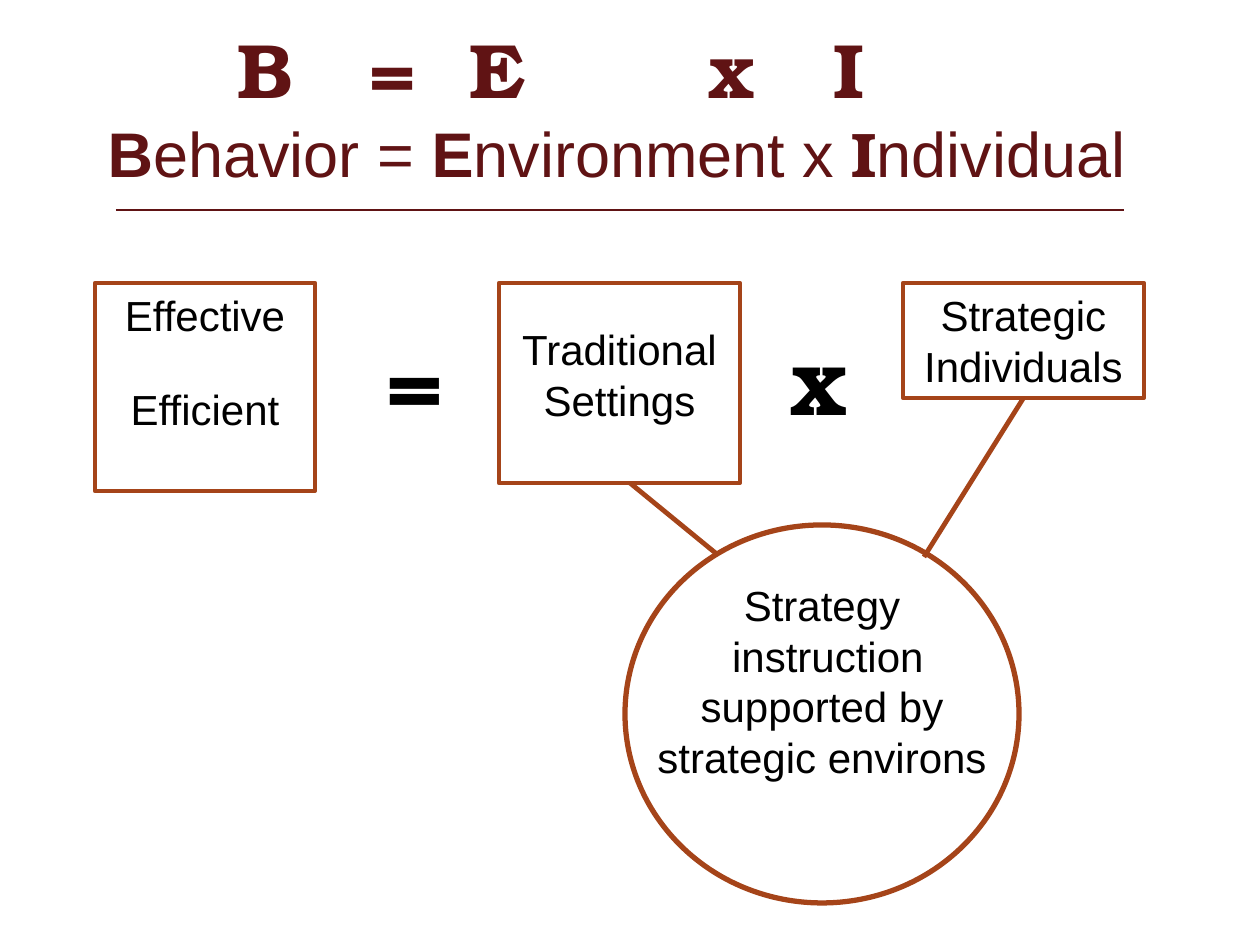
"""Build the slide on behavior as environment times individual."""
from dataclasses import dataclass

from lxml import etree
from pptx import Presentation
from pptx import util as u
from pptx.dml.color import RGBColor
from pptx.enum import shapes, text
from pptx.oxml.ns import qn

SCALE = u.Inches(1) / 126


def px(n):
    return u.Emu(round(n * SCALE))


@dataclass(frozen=True)
class Theme:
    wine: RGBColor = RGBColor.from_string("601314")
    rust: RGBColor = RGBColor.from_string("A54419")
    ink: RGBColor = RGBColor.from_string("000000")
    sans: str = "Arial"
    slab: str = "TeX Gyre Bonum"
    body: int = 24
    lead: int = 29
    head: int = 44
    sub: int = 36
    sign: int = 54


class Deck:
    def __init__(self, theme):
        self.theme = theme
        self.prs = Presentation()
        self.prs.slide_width, self.prs.slide_height = px(1260), px(945)
        self.slide = self.prs.slides.add_slide(self.prs.slide_layouts[5])

    def style(self, run, face, size, color, bold=False):
        font = run.font
        font.name, font.size, font.bold = face, u.Pt(size), bold
        font.color.rgb = color

    def title(self, box, letters, stops, words):
        t = self.theme
        shape = self.slide.shapes.title
        shape.left, shape.top, shape.width, shape.height = map(px, box)
        frame = shape.text_frame
        frame.auto_size = text.MSO_AUTO_SIZE.NONE
        frame.vertical_anchor = text.MSO_ANCHOR.MIDDLE
        frame.margin_bottom = px(78)
        frame.text = "".join("\t" + mark for mark in letters)
        top, low = frame.paragraphs[0], frame.add_paragraph()
        tabs = etree.SubElement(top._p.get_or_add_pPr(), qn("a:tabLst"))
        for stop in stops:
            etree.SubElement(tabs, qn("a:tab"), pos=str(px(stop)), algn="l")
        for run in top.runs:
            self.style(run, t.slab, t.head, t.wine, True)
        for word, face, bold in words:
            run = low.add_run()
            run.text = word
            self.style(run, face, t.sub, t.wine, bold)
        for para in (top, low):
            para.alignment = text.PP_ALIGN.LEFT

    def fill(self, shape, lines, face, size, bold=False, lead=None, gap=0, drop=6):
        frame = shape.text_frame
        frame.word_wrap = True
        frame.auto_size = text.MSO_AUTO_SIZE.NONE
        frame.vertical_anchor = text.MSO_ANCHOR.TOP
        frame.margin_top = px(drop)
        frame.text = "\n".join(lines)
        for i, para in enumerate(frame.paragraphs):
            para.alignment = text.PP_ALIGN.CENTER
            if lead:
                para.line_spacing = u.Pt(lead)
            if i and gap:
                para.space_before = u.Pt(gap)
            for run in para.runs:
                self.style(run, face, size, self.theme.ink, bold)

    def shape(self, kind, box, weight):
        shape = self.slide.shapes.add_shape(kind, *map(px, box))
        shape.shadow.inherit = False
        shape.fill.background()
        shape.line.color.rgb = self.theme.rust
        shape.line.width = u.Pt(weight)
        return shape

    def card(self, box, lines, **gaps):
        t = self.theme
        shape = self.shape(shapes.MSO_SHAPE.RECTANGLE, box, 2.5)
        self.fill(shape, lines, t.sans, t.body, lead=t.lead, **gaps)
        return shape

    def ring(self, box):
        return self.shape(shapes.MSO_SHAPE.OVAL, box, 3)

    def label(self, box, lines):
        t = self.theme
        area = self.slide.shapes.add_textbox(*map(px, box))
        self.fill(area, lines, t.sans, t.body, lead=t.lead)

    def sign(self, left, mark):
        t = self.theme
        area = self.slide.shapes.add_textbox(*map(px, (left, 315, 95, 127)))
        self.fill(area, [mark], t.slab, t.sign, bold=True)

    def line(self, ends, color, weight):
        link = self.slide.shapes.add_connector(
            shapes.MSO_CONNECTOR.STRAIGHT, *map(px, ends))
        etree.SubElement(link._element.spPr, qn("a:effectLst"))
        link.line.color.rgb = color
        link.line.width = u.Pt(weight)
        return link


def main():
    t = Theme()
    deck = Deck(t)
    deck.line((116, 210, 1124, 210), t.wine, 1.5)
    deck.title(
        (95, 63, 1144, 157), "B=ExI", (130, 262, 362, 601, 726),
        [("B", t.sans, True), ("ehavior = ", t.sans, False),
         ("E", t.sans, True), ("nvironment x ", t.sans, False),
         ("I", t.slab, True), ("ndividual", t.sans, False)])

    deck.card((95, 283, 220, 208), ["Effective", "Efficient"], gap=25)
    deck.card((499, 283, 241, 200), ["Traditional Settings"], drop=40)
    person = deck.card((903, 283, 241, 115), ["Strategic", "Individuals"])
    deck.sign(367, "=")
    deck.sign(771, "x")

    link = deck.line((1023, 398, 924, 557), t.rust, 2.75)
    link.begin_connect(person, 2)
    deck.line((718, 555, 630, 483), t.rust, 2.75)
    deck.ring((625, 525, 394, 378))
    deck.label((625, 573, 394, 217),
               ["Strategy", " instruction supported by strategic environs"])
    deck.prs.save("out.pptx")


if __name__ == "__main__":
    main()
